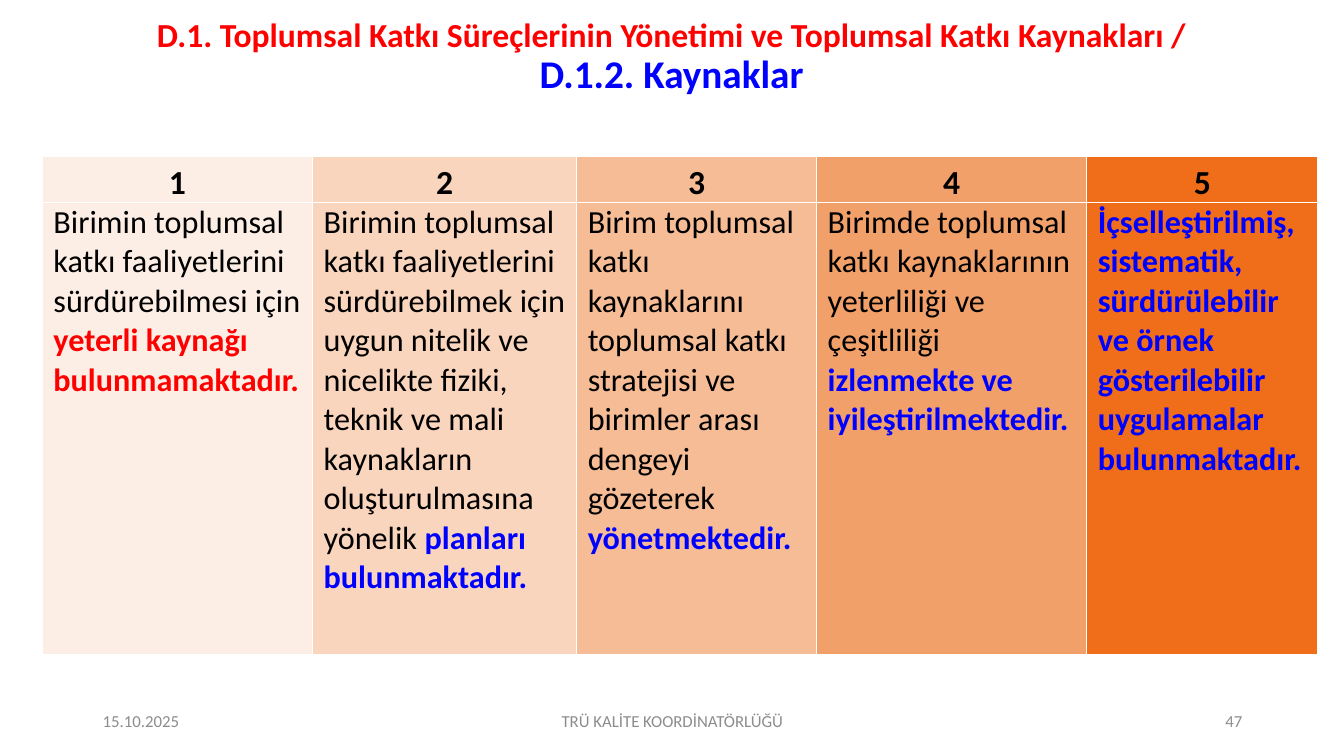
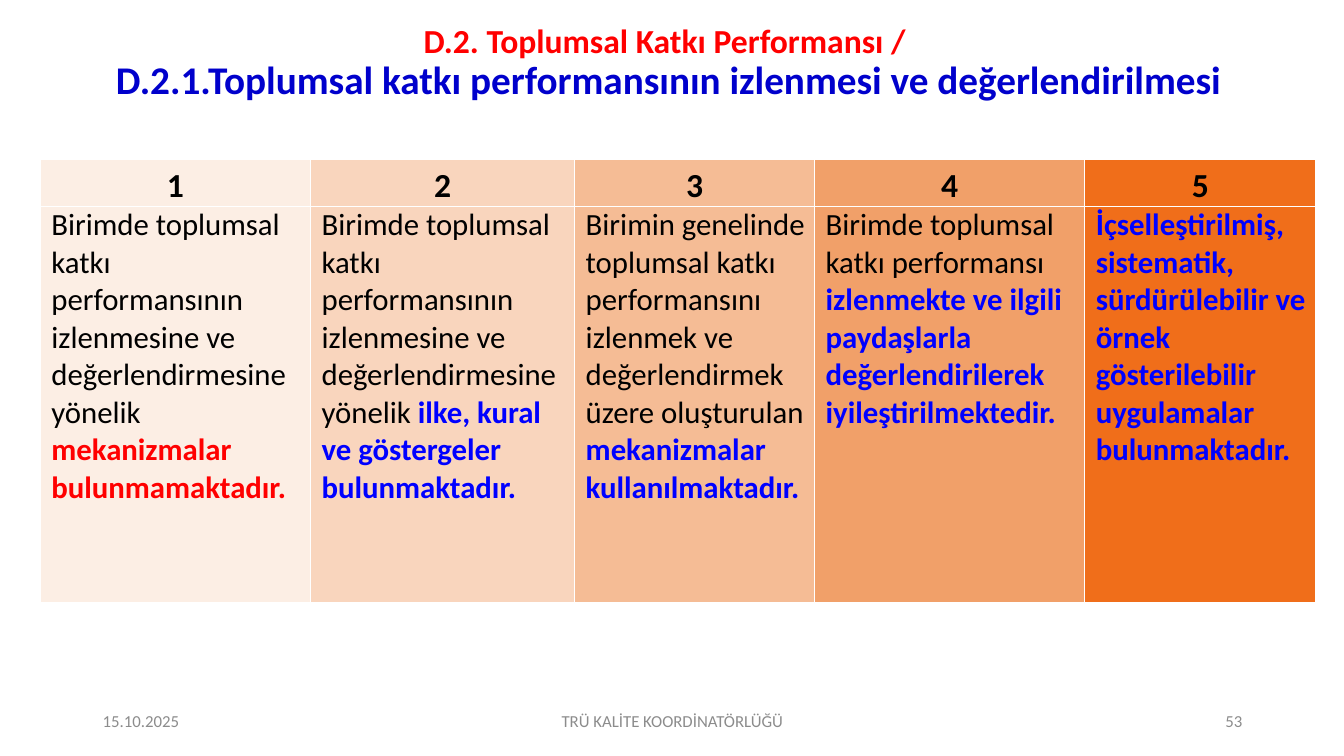
from lxml.etree import SubElement
from pptx import Presentation
from pptx.dml.color import RGBColor
from pptx.enum.text import MSO_ANCHOR as Anchor, PP_ALIGN as Align
from pptx.oxml.ns import qn
from pptx.util import Inches, Pt

FONT = "Calibri"
BLACK, WHITE, GREY = "000000", "FFFFFF", "8C8C8C"
RED, BLUE, NAVY = "FF0000", "0000FF", "0000CC"
FILLS = ["FCEEE4", "F9D5BD", "F5BC95", "F1A069", "F06E1A"]
WIDTHS = [2.68, 2.62, 2.38, 2.68, 2.29]
DATE, UNIT = "15.10.2025", "TRÜ KALİTE KOORDİNATÖRLÜĞÜ"
TOP_LEVEL = ("", "İçselleştirilmiş, sistematik, sürdürülebilir ve örnek "
             "gösterilebilir uygulamalar bulunmaktadır.", BLUE)

# Each level of a scale: plain text, stressed text, colour of the stress
SLIDES = [
    {
        "number": "47",
        "box": (0.07, 0.19, 13.18, 0.76),
        "title": ("D.1. Toplumsal Katkı Süreçlerinin Yönetimi ve Toplumsal Katkı Kaynakları /",
                  "D.1.2. Kaynaklar", BLUE),
        "corner": (0.42, 1.55),
        "rows": (0.46, 4.48),
        "size": 23,
        "levels": [
            ("Birimin toplumsal katkı faaliyetlerini sürdürebilmesi için ",
             "yeterli kaynağı bulunmamaktadır.", RED),
            ("Birimin toplumsal katkı faaliyetlerini sürdürebilmek için uygun nitelik ve "
             "nicelikte fiziki, teknik ve mali kaynakların oluşturulmasına yönelik ",
             "planları bulunmaktadır.", BLUE),
            ("Birim toplumsal katkı kaynaklarını toplumsal katkı stratejisi ve "
             "birimler arası dengeyi gözeterek ", "yönetmektedir.", BLUE),
            ("Birimde toplumsal katkı kaynaklarının yeterliliği ve çeşitliliği ",
             "izlenmekte ve iyileştirilmektedir.", BLUE),
            TOP_LEVEL,
        ],
    },
    {
        "number": "53",
        "box": (0, 0.19, 13.26, 0.88),
        "title": ("D.2. Toplumsal Katkı Performansı / ",
                  "D.2.1.Toplumsal katkı performansının izlenmesi ve değerlendirilmesi", NAVY),
        "corner": (0.4, 1.58),
        "rows": (0.47, 3.93),
        "size": 22,
        "levels": [
            ("Birimde toplumsal katkı performansının izlenmesine ve değerlendirmesine yönelik ",
             "mekanizmalar bulunmamaktadır.", RED),
            ("Birimde toplumsal katkı performansının izlenmesine ve değerlendirmesine yönelik ",
             "ilke, kural ve göstergeler bulunmaktadır.", BLUE),
            ("Birimin genelinde toplumsal katkı performansını izlenmek ve değerlendirmek "
             "üzere oluşturulan ", "mekanizmalar kullanılmaktadır.", BLUE),
            ("Birimde toplumsal katkı performansı ",
             "izlenmekte ve ilgili paydaşlarla değerlendirilerek iyileştirilmektedir.", BLUE),
            TOP_LEVEL,
        ],
    },
]


def rgb(code):
    return RGBColor.from_string(code)


def assign(target, values):
    for name, value in values.items():
        setattr(target, name, value)


def add_run(para, text, size, color, bold=False):
    run = para.add_run()
    run.text = text
    assign(run.font, {"name": FONT, "size": Pt(size), "bold": bold})
    run.font.color.rgb = rgb(color)


def add_box(slide, box, align):
    """Add a wrapping, middle-anchored text box and return its paragraph."""
    frame = slide.shapes.add_textbox(*map(Inches, box)).text_frame
    assign(frame, {"word_wrap": True, "vertical_anchor": Anchor.MIDDLE})
    para = frame.paragraphs[0]
    para.alignment = align
    return para


def add_title(slide, box, section, topic, color):
    para = add_box(slide, box, Align.CENTER)
    para.line_spacing = 0.9
    add_run(para, section, 24, RED, True)
    para.add_line_break()
    add_run(para, topic, 28, color, True)


def add_footer(slide, number):
    for text, left, width, align in [(DATE, 0.92, 3, Align.LEFT),
                                     (UNIT, 4.42, 4.5, Align.CENTER),
                                     (number, 9.42, 3, Align.RIGHT)]:
        para = add_box(slide, (left, 6.95, width, 0.4), align)
        add_run(para, text, 12, GREY)


def style_cell(cell, fill, anchor):
    side = Inches(0.07)
    assign(cell, {"margin_left": side, "margin_right": side, "margin_top": 0,
                  "margin_bottom": 0, "vertical_anchor": anchor})
    props = cell._tc.get_or_add_tcPr()
    for edge in ("a:lnL", "a:lnR", "a:lnT", "a:lnB"):
        line = SubElement(props, qn(edge), w=str(Pt(1)))
        solid = SubElement(line, qn("a:solidFill"))
        SubElement(solid, qn("a:srgbClr"), val=WHITE)
    cell.fill.solid()
    cell.fill.fore_color.rgb = rgb(fill)


def add_scale(slide, corner, rows, size, levels):
    """Add the five-level maturity table."""
    spans = map(Inches, (*corner, sum(WIDTHS), sum(rows)))
    table = slide.shapes.add_table(2, len(levels), *spans).table
    assign(table, {"first_row": False, "horz_banding": False})
    for row, height in zip(table.rows, rows):
        row.height = Inches(height)
    for col, (plain, stress, color) in enumerate(levels):
        table.columns[col].width = Inches(WIDTHS[col])
        head, body = table.cell(0, col), table.cell(1, col)
        style_cell(head, FILLS[col], Anchor.BOTTOM)
        style_cell(body, FILLS[col], Anchor.TOP)
        para = head.text_frame.paragraphs[0]
        assign(para, {"alignment": Align.CENTER, "line_spacing": 1.15})
        add_run(para, str(col + 1), 24, BLACK, True)
        para = body.text_frame.paragraphs[0]
        para._p.get_or_add_pPr().set("marL", str(Inches(0.04)))
        if plain:
            add_run(para, plain, size, BLACK)
        add_run(para, stress, size, color, True)


def main():
    deck = Presentation()
    assign(deck, {"slide_width": Inches(13.33), "slide_height": Inches(7.5)})
    for page in SLIDES:
        slide = deck.slides.add_slide(deck.slide_layouts[6])
        add_title(slide, page["box"], *page["title"])
        add_footer(slide, page["number"])
        add_scale(slide, page["corner"], page["rows"], page["size"], page["levels"])
    deck.save("out.pptx")


if __name__ == "__main__":
    main()
